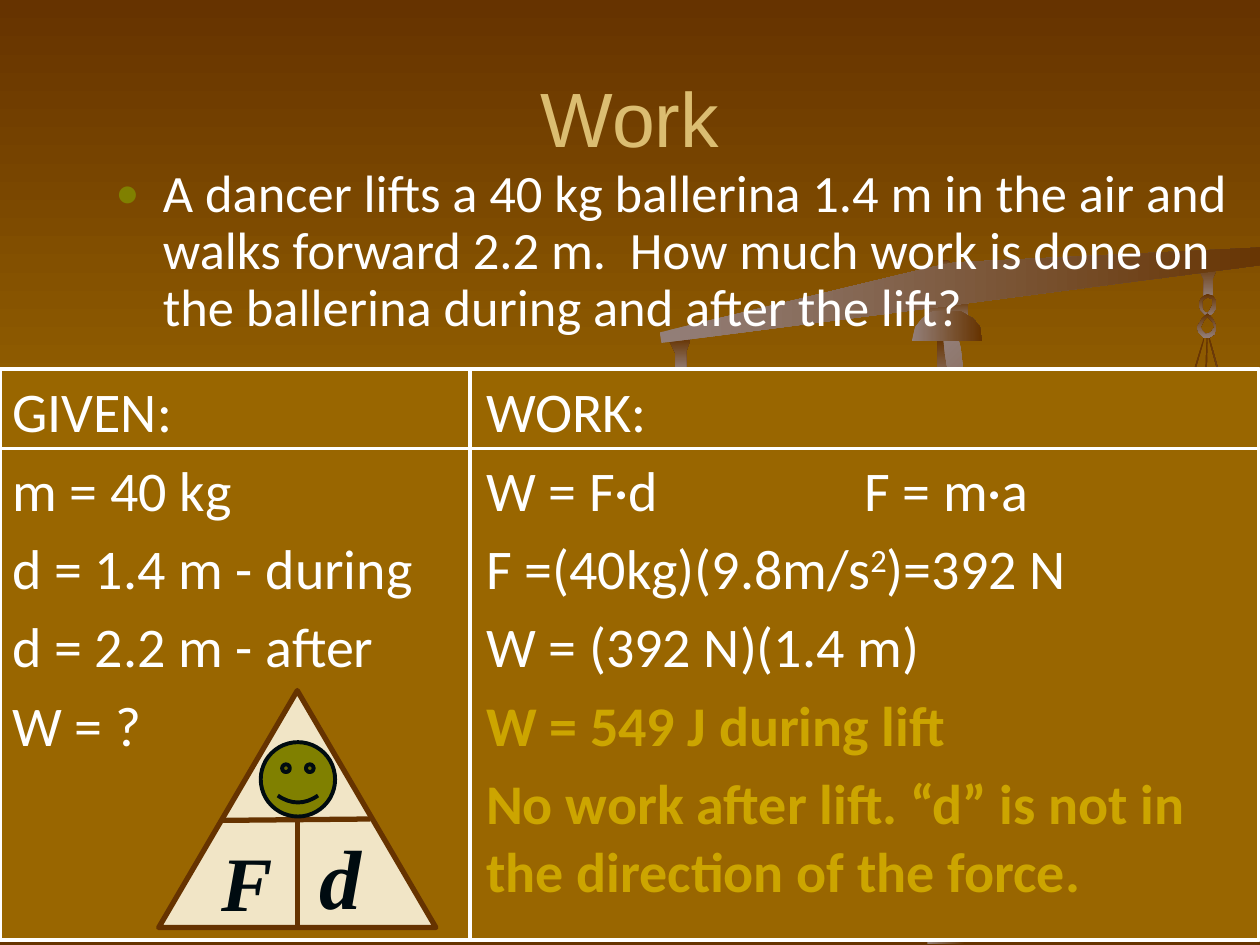
import copy
import lxml.etree
import pptx
import pptx.dml.color
import pptx.enum.shapes
import pptx.enum.text
import pptx.oxml.ns
import pptx.util

Pt = pptx.util.Pt
RGB = pptx.dml.color.RGBColor
SHAPE = pptx.enum.shapes.MSO_SHAPE
ALIGN = pptx.enum.text.PP_ALIGN
ANCHOR = pptx.enum.text.MSO_ANCHOR
qn = pptx.oxml.ns.qn

BROWN = RGB(0x66, 0x33, 0x00)
AMBER = RGB(0x99, 0x66, 0x00)
TAUPE = RGB(0x93, 0x7F, 0x79)
SAND = RGB(0xDB, 0xBD, 0x71)
CREAM = RGB(0xF1, 0xE5, 0xC6)
GOLD = RGB(0xCC, 0xA5, 0x00)
OLIVE = RGB(0x80, 0x80, 0x00)
INK = RGB(0x00, 0x0B, 0x10)
WHITE = RGB(0xFF, 0xFF, 0xFF)

BEAM = [(352.8, 0), (354.6, 8.6), (0.7, 55.4), (0, 49), (153.4, 11.5), (169.2, 9.4)]
HOOK = [(12.8, 0), (0, 1.2), (3.6, 9.2), (3.6, 19.3), (9.2, 19.3), (9.2, 8.6)]
LEFT_RING = [
    [(5.8, 12.2), (9.4, 9.4), (11.5, 5), (10.8, 3.6), (8.6, 0.7), (5, 0),
     (2.9, 0), (1.4, 1.4), (0, 5), (1.4, 8.6), (3.6, 10.8)],
    [(5.8, 1.4), (8.6, 2.9), (9.4, 5), (6.5, 8.6), (5.8, 10.1), (3.6, 8.6), (2.2, 4.3), (3.6, 1.4)],
]
UPPER_RING = [
    [(5, 12.2), (7.9, 10.1), (10.1, 7.2), (10.1, 3.6), (7.9, 0.7), (5, 0),
     (2.9, 0.7), (1.4, 2.2), (0, 5), (1.4, 8.6), (3.6, 10.8)],
    [(5.8, 1.4), (7.9, 2.2), (8.6, 5), (6.5, 9.4), (5, 10.8), (3.6, 9.4), (2.2, 7.2), (2.2, 3.6), (3.6, 2.2)],
]
LOWER_RING = [
    [(0.7, 10.8), (3.6, 13.7), (7.2, 13.7), (10.1, 11.5), (10.8, 7.9), (10.1, 4.3),
     (8.6, 2.2), (6.5, 0), (2.9, 2.9), (0, 7.9)],
    [(2.2, 7.9), (4.3, 3.6), (5.8, 1.4), (9.4, 5), (10.1, 7.9), (7.9, 10.8), (5, 11.5), (2.9, 10.1)],
]
ARM = [(31, 197.3), (1.4, 10.8), (0, 2.2), (8.6, 0), (10.8, 8.6)]
CAP = [(20.2, 0), (28.1, 0.7), (34.6, 4.3), (38.2, 9.4), (39.6, 17.3), (0, 17.3),
       (1.4, 9.4), (5.8, 4.3), (11.5, 0.7)]


def set_gradient(fill, angle, colors):
    fill.gradient()
    fill.gradient_angle = (360 - angle) % 360
    for stop, color in zip(fill.gradient_stops, colors):
        stop.color.rgb = color


def add_background(s):
    fill = s.background.fill
    set_gradient(fill, 90, (BROWN, BROWN))
    first = next(s.element.iter(qn("a:gs")))
    first.addnext(copy.deepcopy(first))
    for stop, color, position in zip(fill.gradient_stops, (BROWN, AMBER, BROWN), (0, 0.5, 1)):
        stop.color.rgb = color
        stop.position = position


def finish_metal(sp, angle, colors):
    sp.shadow.inherit = False
    sp.line.fill.background()
    set_gradient(sp.fill, angle, colors)


def add_scale(s, x, y):
    dark, light = (BROWN, TAUPE), (TAUPE, BROWN)

    def preset(kind, left, top, width, height, rotation=0, angle=90, colors=dark):
        sp = s.shapes.add_shape(kind, Pt(x + left), Pt(y + top), Pt(width), Pt(height))
        sp.rotation = rotation
        finish_metal(sp, angle, colors)

    def outline(contours, left, top, angle=90, colors=dark):
        paths = [[(x + left + px, y + top + py) for px, py in c] for c in contours]
        fb = s.shapes.build_freeform(*paths[0][0], scale=12700.0)
        fb.add_line_segments(paths[0][1:], close=True)
        for contour in paths[1:]:
            fb.move_to(*contour[0])
            fb.add_line_segments(contour[1:], close=True)
        finish_metal(fb.convert_to_shape(), angle, colors)

    preset(SHAPE.RECTANGLE, 151.2, 29.5, 24.5, 13)
    preset(SHAPE.OVAL, 159.8, 7.2, 5.8, 5.8)
    for left, top, height, rotation in ((273.6, 46.1, 259.2, 16.6), (308.9, 50.4, 249.8, 1.5),
                                        (327.6, 49, 110.2, 344.6)):
        preset(SHAPE.RECTANGLE, left, top, 0.7, height, rotation)
    outline([HOOK], 5, 51.8)
    outline(LEFT_RING, 5, 69.8)
    outline([HOOK], 306.7, 9.4)
    outline(UPPER_RING, 307.4, 27.4)
    outline(LOWER_RING, 306.7, 38.2)
    outline([BEAM], 0, 0, 0, light)
    preset(SHAPE.RECTANGLE, 152.6, 80.6, 21.6, 317.5, 0, 0, light)
    preset(SHAPE.RECTANGLE, 158.4, 51.8, 9.4, 30.2)
    outline([ARM], 161.3, 49.7, 45, light)
    outline([CAP], 144, 36.7, 0, light)


def add_text(s, box, paragraphs, size, font, color, before=0, wrap=True):
    tf = s.shapes.add_textbox(*map(Pt, box)).text_frame
    tf.word_wrap = wrap
    for i, (runs, bold, run_color) in enumerate(paragraphs):
        p = tf.paragraphs[0] if i == 0 else tf.add_paragraph()
        p.space_before = Pt(before)
        for text, baseline in runs:
            r = p.add_run()
            r.text = text
            r.font.size = Pt(size)
            r.font.name = font
            r.font.bold = bold
            r.font.color.rgb = run_color or color
            if baseline:
                r.font._element.set("baseline", str(baseline))
    return tf


def plain(text, bold=False, color=None):
    return [(text, 0)], bold, color


def add_line(s, start, end, color, width):
    ln = s.shapes.add_connector(pptx.enum.shapes.MSO_CONNECTOR.STRAIGHT, *map(Pt, start + end))
    ln.line.color.rgb = color
    ln.line.width = Pt(width)
    lxml.etree.SubElement(ln.element.spPr, qn("a:effectLst"))


def add_solid(s, kind, box, fill, line, width):
    sp = s.shapes.add_shape(kind, *map(Pt, box))
    sp.shadow.inherit = False
    sp.fill.solid()
    sp.fill.fore_color.rgb = fill
    sp.line.color.rgb = line
    sp.line.width = Pt(width)
    return sp


def add_title(s, box):
    tf = add_text(s, box, [plain("Work")], 44, "Arial", SAND)
    tf.vertical_anchor = ANCHOR.MIDDLE
    tf.paragraphs[0].alignment = ALIGN.CENTER


def add_question(s, box):
    text = ("A dancer lifts a 40 kg ballerina 1.4 m in the air and walks forward 2.2 m.  "
            "How much work is done on the ballerina during and after the lift?")
    p = add_text(s, box, [plain(text)], 30, "Calibri", WHITE).paragraphs[0]
    p.line_spacing = 0.9
    pPr = p._p.get_or_add_pPr()
    pPr.set("marL", str(Pt(27)))
    pPr.set("indent", str(-Pt(27)))
    color = lxml.etree.SubElement(pPr, qn("a:buClr"))
    lxml.etree.SubElement(color, qn("a:srgbClr"), val=str(OLIVE))
    lxml.etree.SubElement(pPr, qn("a:buSzPct"), val="75000")
    lxml.etree.SubElement(pPr, qn("a:buFont"), typeface="Arial")
    lxml.etree.SubElement(pPr, qn("a:buChar"), char="●")


def add_solution(s, x, y, width, height):
    add_solid(s, SHAPE.RECTANGLE, (x, y, width, height), AMBER, WHITE, 2.25)
    given = ["GIVEN:", "m = 40 kg", "d = 1.4 m - during", "d = 2.2 m - after", "W = ?"]
    work = [
        plain("WORK:"),
        plain("W = F·d\t\tF = m·a"),
        ([("F =(40kg)(9.8m/s", 0), ("2", 30000), (")=392 N", 0)], False, None),
        plain("W = (392 N)(1.4 m)"),
        plain("W = 549 J during lift", True, GOLD),
        plain("No work after lift. “d” is not in the direction of the force.", True, GOLD),
    ]
    add_text(s, (x, y + 0.7, 297.4, 204.5), [plain(t) for t in given], 32, "Calibri", WHITE, 6.4)
    tf = add_text(s, (x + 270.7, y + 0.7, 449.3, 202.3), work, 32, "Calibri", WHITE, 6.4)
    tabs = lxml.etree.SubElement(tf.paragraphs[1]._p.get_or_add_pPr(), qn("a:tabLst"))
    for position in (144, 216):
        lxml.etree.SubElement(tabs, qn("a:tab"), pos=str(Pt(position)), algn="l")
    add_line(s, (x + 268.6, y), (x + 268.6, y + height), WHITE, 2.25)
    add_line(s, (x, y + 45.3), (x + 720, y + 45.3), WHITE, 2.25)


def add_formula_triangle(s, x, y, width, height):
    add_solid(s, SHAPE.ISOSCELES_TRIANGLE, (x, y, width, height), CREAM, BROWN, 3)
    middle = x + width / 2
    add_line(s, (x + 35.3, y + 74.2), (x + 121, y + 73.4), BROWN, 3)
    add_line(s, (middle, y + 74.2), (middle, y + height), BROWN, 3)
    for letter, left, top, w, h, size in (("F", 28.8, 78.5, 43.9, 59.8, 44),
                                          ("d", 85, 73.4, 38.2, 64.8, 48)):
        tf = add_text(s, (x + left, y + top, w, h), [plain(letter, True)], size,
                      "Times New Roman", INK, wrap=False)
        tf.paragraphs[0].runs[0].font.italic = True
    face = add_solid(s, SHAPE.SMILEY_FACE, (x + 58.3, y + 29.5, 42.5, 42.5), OLIVE, INK, 2.25)
    face.adjustments[0] = 0.05


def main():
    prs = pptx.Presentation()
    prs.slide_width, prs.slide_height = Pt(720), Pt(540)
    s = prs.slides.add_slide(prs.slide_layouts[6])
    add_background(s)
    add_scale(s, 377.3, 141.1)
    add_title(s, (36, 21.6, 648, 90))
    add_question(s, (59, 92.2, 661, 123.8))
    add_solution(s, 0, 211, 719.3, 326)
    add_formula_triangle(s, 90.7, 394.6, 158.4, 135.4)
    prs.save("out.pptx")


if __name__ == "__main__":
    main()
